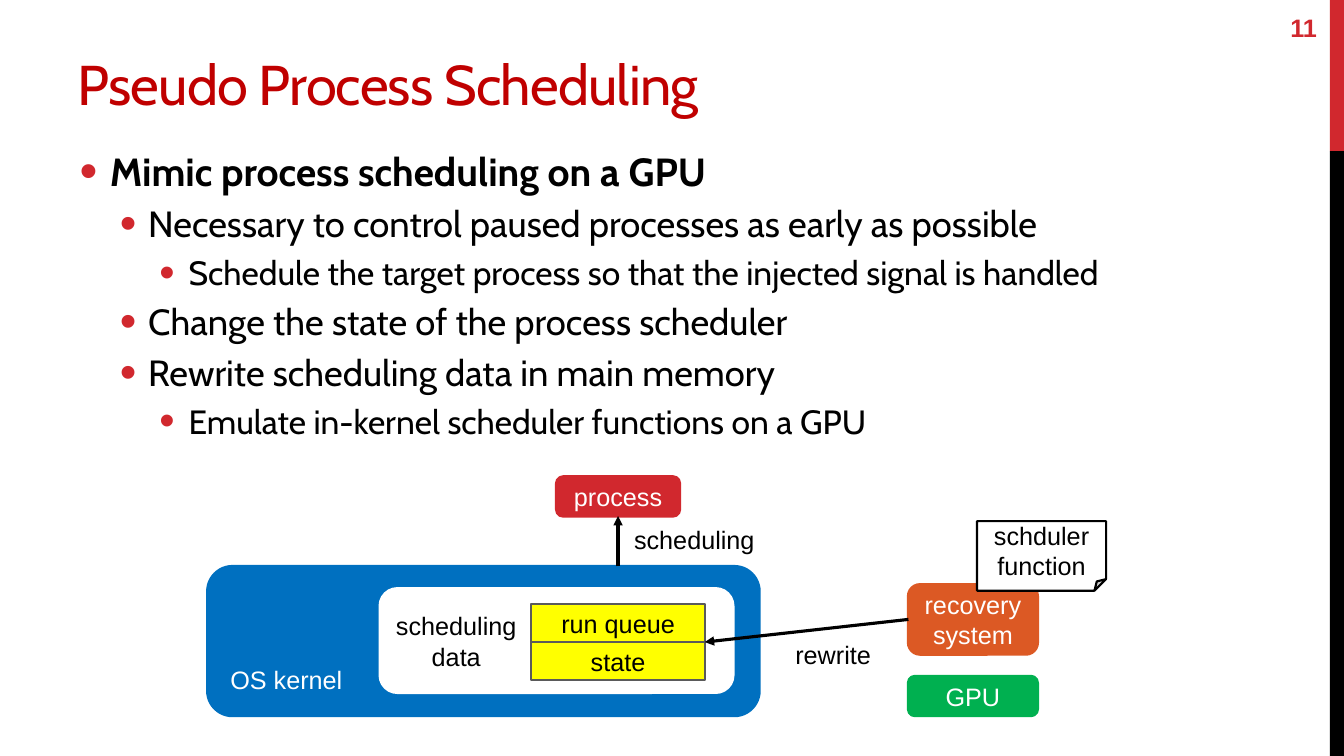
from lxml import etree
from pptx import Presentation
from pptx import util as u
from pptx.dml import color
from pptx.enum import shapes, text
from pptx.oxml import ns

SCALE = 9144
RED, BLACK, WHITE, BLUE = "D1282E", "000000", "FFFFFF", "0070C0"
RECT = shapes.MSO_SHAPE.RECTANGLE
ROUND = shapes.MSO_SHAPE.ROUNDED_RECTANGLE
FOLDED = shapes.MSO_SHAPE.FOLDED_CORNER
LEFT, CENTER, RIGHT = text.PP_ALIGN.LEFT, text.PP_ALIGN.CENTER, text.PP_ALIGN.RIGHT

BULLETS = [
    (0, "Mimic process scheduling on a GPU"),
    (1, "Necessary to control paused processes as early as possible"),
    (2, "Schedule the target process so that the injected signal is handled"),
    (1, "Change the state of the process scheduler"),
    (1, "Rewrite scheduling data in main memory"),
    (2, "Emulate in-kernel scheduler functions on a GPU"),
]
LEVELS = [(28, 30, -30), (26, 68, -28), (24, 108, -29)]


def px(n):
    return u.Emu(n * SCALE)


def rgb(value):
    return color.RGBColor.from_string(value)


def add_xml(parent, tag, **attrs):
    return etree.SubElement(parent, ns.qn(tag), attrs)


def place(sp, x, y, w, h):
    sp.left, sp.top, sp.width, sp.height = px(x), px(y), px(w), px(h)


def add_run(p, words, size, ink, font="Arial", bold=False):
    r = p.add_run()
    r.text = words
    r.font.size = u.Pt(size)
    r.font.name = font
    r.font.bold = bold
    r.font.color.rgb = rgb(ink)
    return r


def write_lines(tf, lines, ink, align, size=18, bold=False):
    for i, line in enumerate(lines):
        p = tf.add_paragraph() if i else tf.paragraphs[0]
        p.alignment = align
        add_run(p, line, size, ink, bold=bold)


def add_title(s, words):
    sp = s.shapes.title
    place(sp, 67, 17, 1202, 104)
    tf = sp.text_frame
    tf.vertical_anchor = text.MSO_ANCHOR.BOTTOM
    tf.auto_size = text.MSO_AUTO_SIZE.NONE
    p = tf.paragraphs[0]
    p.alignment = LEFT
    r = add_run(p, words, 40, "C00000", "Cabin")
    r.font._element.set("spc", "-60")


def add_bullets(s, items):
    sp = s.placeholders[1]
    place(sp, 67, 141, 1202, 569)
    tf = sp.text_frame
    tf.auto_size = text.MSO_AUTO_SIZE.NONE
    tf.margin_left = tf.margin_right = px(12)
    for i, (level, words) in enumerate(items):
        p = tf.add_paragraph() if i else tf.paragraphs[0]
        p.level = level
        if level == 0:
            p.space_before = u.Pt(6)
        size, margin, indent = LEVELS[level]
        pPr = p._p.get_or_add_pPr()
        pPr.set("marL", str(px(margin)))
        pPr.set("indent", str(px(indent)))
        add_xml(add_xml(pPr, "a:buClr"), "a:srgbClr", val=RED)
        add_xml(pPr, "a:buSzPct", val="130000")
        add_xml(pPr, "a:buFont", typeface="Arial")
        add_xml(pPr, "a:buChar", char="•")
        add_run(p, words, size, BLACK, "Cabin", level == 0)


def add_box(s, kind, x, y, w, h, fill, line=None, weight=2.25, lines=(), ink=WHITE):
    sp = s.shapes.add_shape(kind, px(x), px(y), px(w), px(h))
    sp.shadow.inherit = False
    sp.fill.solid()
    sp.fill.fore_color.rgb = rgb(fill)
    if line:
        sp.line.color.rgb = rgb(line)
        sp.line.width = u.Pt(weight)
    else:
        sp.line.fill.background()
    sp.text_frame.vertical_anchor = text.MSO_ANCHOR.MIDDLE
    write_lines(sp.text_frame, lines, ink, CENTER)
    return sp


def add_label(s, x, y, w, h, lines, ink=BLACK, align=LEFT, bold=False):
    tf = s.shapes.add_textbox(px(x), px(y), px(w), px(h)).text_frame
    tf.word_wrap = False
    write_lines(tf, lines, ink, align, bold=bold)
    return tf


def add_arrow(s, x1, y1, x2, y2):
    c = s.shapes.add_connector(shapes.MSO_CONNECTOR.STRAIGHT, px(x1), px(y1), px(x2), px(y2))
    c.line.color.rgb = rgb(BLACK)
    c.line.width = u.Pt(2.25)
    add_xml(c.line._get_or_add_ln(), "a:tailEnd", type="triangle")
    add_xml(c._element.spPr, "a:effectLst")
    return c


def add_diagram(s):
    add_box(s, ROUND, 206, 562, 547, 148, BLUE, BLUE)
    add_box(s, ROUND, 377, 584, 350, 103, WHITE, WHITE)
    for i, field in enumerate(["run queue", "state"]):
        add_box(s, RECT, 527, 599 + 38 * i, 172, 38, "FFFF00", "5A5A5A", 1.5, [field], BLACK)
    process = add_box(s, ROUND, 552, 473, 122, 39, RED, RED, lines=["process"])
    add_box(s, ROUND, 901, 671, 128, 39, "00B050", "00B050", lines=["GPU"])
    recovery = add_box(s, ROUND, 901, 580, 128, 69, "DC5924", "DC5924", lines=["recovery system"])

    rewrite = add_arrow(s, 901, 615, 699, 637)
    rewrite.begin_connect(recovery, 1)
    schedule = add_arrow(s, 613, 562, 613, 512)
    schedule.end_connect(process, 2)

    add_label(s, 779, 629, 96, 40, ["rewrite"])
    add_label(s, 619, 515, 141, 40, ["scheduling"])
    add_label(s, 382, 601, 141, 71, ["scheduling", "data"], align=CENTER)
    add_box(s, FOLDED, 969, 517, 128, 69, WHITE, BLACK, 1.5, ["schduler", "function"], BLACK)
    add_label(s, 218, 654, 132, 40, ["OS kernel"], WHITE, CENTER)


def main():
    prs = Presentation()
    prs.slide_width, prs.slide_height = px(1333), px(750)
    s = prs.slides.add_slide(prs.slide_layouts[1])
    add_box(s, RECT, 1319, 0, 14, 150, RED)
    add_box(s, RECT, 1319, 150, 14, 600, BLACK)
    add_title(s, "Pseudo Process Scheduling")
    add_bullets(s, BULLETS)
    number = add_label(s, 1216, 7, 100, 40, ["11"], RED, RIGHT, True)
    number.word_wrap = True
    number.vertical_anchor = text.MSO_ANCHOR.MIDDLE
    add_diagram(s)
    prs.save("out.pptx")


if __name__ == "__main__":
    main()
